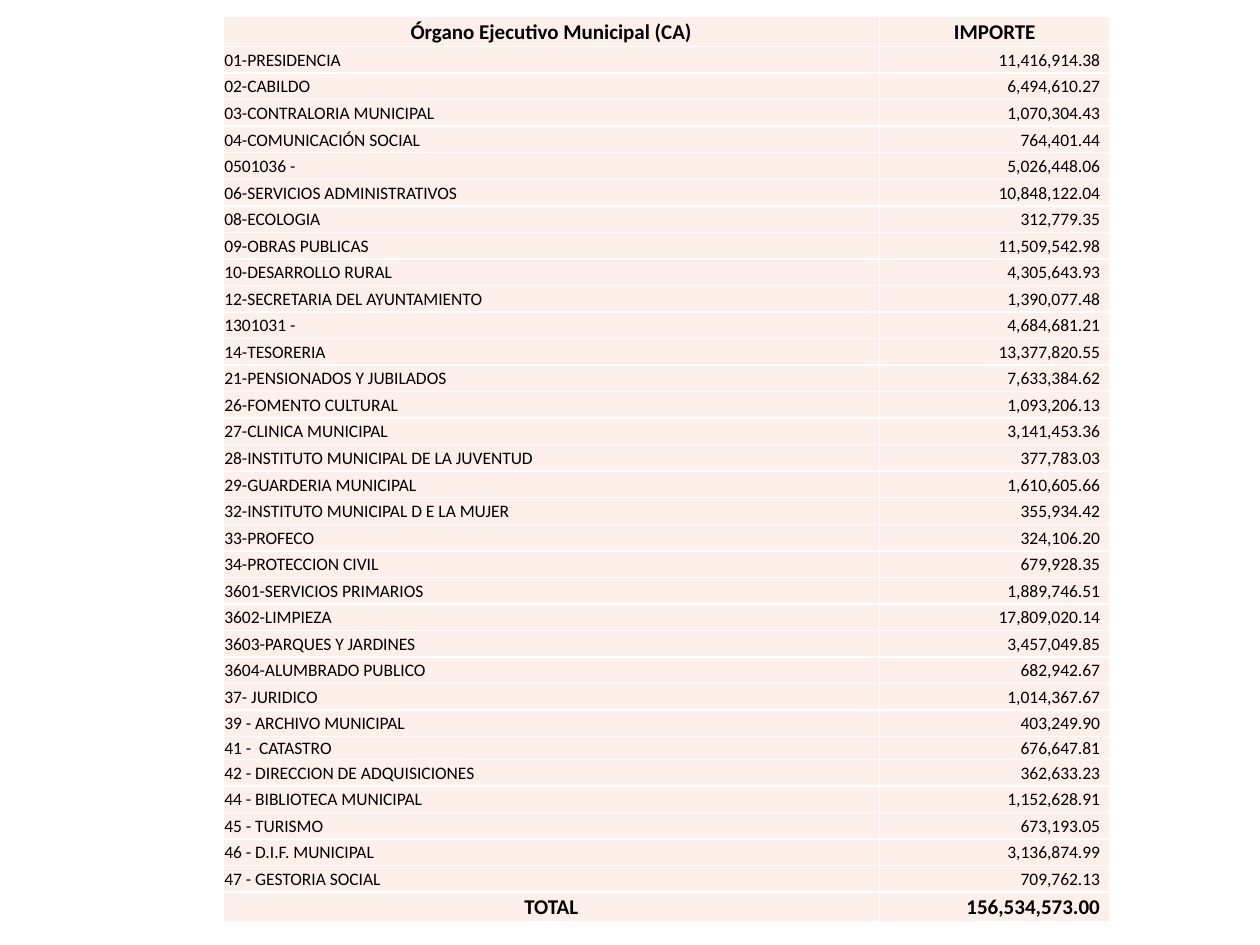
from lxml import etree
from pptx import Presentation
from pptx.dml.color import RGBColor
from pptx.enum.text import MSO_ANCHOR, PP_ALIGN
from pptx.oxml.ns import qn
from pptx.util import Inches, Pt

LEFT, CENTER, RIGHT = PP_ALIGN.LEFT, PP_ALIGN.CENTER, PP_ALIGN.RIGHT
MIDDLE = MSO_ANCHOR.MIDDLE
BLACK = RGBColor(0x00, 0x00, 0x00)
WHITE = RGBColor(0xFF, 0xFF, 0xFF)
BLUSH = RGBColor(0xFD, 0xEF, 0xE9)

HEADER = ("Órgano Ejecutivo Municipal (CA)", "IMPORTE")
TOTAL = ("TOTAL", "156,534,573.00")
DEPARTMENTS = [
    ("01-PRESIDENCIA", "11,416,914.38"),
    ("02-CABILDO", "6,494,610.27"),
    ("03-CONTRALORIA MUNICIPAL", "1,070,304.43"),
    ("04-COMUNICACIÓN SOCIAL", "764,401.44"),
    ("0501036 -", "5,026,448.06"),
    ("06-SERVICIOS ADMINISTRATIVOS", "10,848,122.04"),
    ("08-ECOLOGIA", "312,779.35"),
    ("09-OBRAS PUBLICAS", "11,509,542.98"),
    ("10-DESARROLLO RURAL", "4,305,643.93"),
    ("12-SECRETARIA DEL AYUNTAMIENTO", "1,390,077.48"),
    ("1301031 -", "4,684,681.21"),
    ("14-TESORERIA", "13,377,820.55"),
    ("21-PENSIONADOS Y JUBILADOS", "7,633,384.62"),
    ("26-FOMENTO CULTURAL", "1,093,206.13"),
    ("27-CLINICA MUNICIPAL", "3,141,453.36"),
    ("28-INSTITUTO MUNICIPAL DE LA JUVENTUD", "377,783.03"),
    ("29-GUARDERIA MUNICIPAL", "1,610,605.66"),
    ("32-INSTITUTO MUNICIPAL D E LA MUJER", "355,934.42"),
    ("33-PROFECO", "324,106.20"),
    ("34-PROTECCION CIVIL", "679,928.35"),
    ("3601-SERVICIOS PRIMARIOS", "1,889,746.51"),
    ("3602-LIMPIEZA", "17,809,020.14"),
    ("3603-PARQUES Y JARDINES", "3,457,049.85"),
    ("3604-ALUMBRADO PUBLICO", "682,942.67"),
    ("37- JURIDICO", "1,014,367.67"),
    ("39 - ARCHIVO MUNICIPAL", "403,249.90"),
    ("41 -  CATASTRO", "676,647.81"),
    ("42 - DIRECCION DE ADQUISICIONES", "362,633.23"),
    ("44 - BIBLIOTECA MUNICIPAL", "1,152,628.91"),
    ("45 - TURISMO", "673,193.05"),
    ("46 - D.I.F. MUNICIPAL", "3,136,874.99"),
    ("47 - GESTORIA SOCIAL", "709,762.13"),
]
SHORT_ROW = 27
COLUMN_WIDTHS = (Inches(5.21), Inches(1.83))
TABLE_HEIGHT = Inches(7.2)
HEADING_HEIGHT = Inches(0.24)
SHORT_HEIGHT = Inches(0.18)

BODY_FONT = {"name": "Calibri", "size": Pt(10), "bold": False}
HEADING_FONT = {**BODY_FONT, "size": Pt(12), "bold": True}
CELL_FORMAT = {"vertical_anchor": MIDDLE, "margin_left": Inches(0.01),
               "margin_top": Inches(0.01), "margin_right": Inches(0.01),
               "margin_bottom": 0}
AMOUNT_FORMAT = {**CELL_FORMAT, "margin_right": Inches(0.08)}
TABLE_FLAGS = {"first_row": False, "horz_banding": False}


def apply_format(target, values):
    """Set every attribute named in values on the target."""
    for name, value in values.items():
        setattr(target, name, value)


class BudgetSlide:
    """Hold the table style and the slide that receives it."""

    def __init__(self, slide, fill, border, text_color):
        self.slide = slide
        self.fill = fill
        self.border = border
        self.text_color = text_color

    def add_borders(self, cell):
        """Draw a thin line on all four sides of a cell."""
        properties = cell._tc.get_or_add_tcPr()
        for side in ("a:lnL", "a:lnR", "a:lnT", "a:lnB"):
            line = etree.SubElement(properties, qn(side), w=str(Pt(1)))
            solid = etree.SubElement(line, qn("a:solidFill"))
            etree.SubElement(solid, qn("a:srgbClr"), val=str(self.border))

    def fill_cell(self, cell, text, alignment, font, cell_format):
        """Write and style one cell."""
        self.add_borders(cell)
        cell.fill.solid()
        cell.fill.fore_color.rgb = self.fill
        apply_format(cell, cell_format)
        paragraph = cell.text_frame.paragraphs[0]
        paragraph.alignment = alignment
        run = paragraph.add_run()
        run.text = text
        apply_format(run.font, font)
        run.font.color.rgb = self.text_color

    def add_table(self, left, top, rows, heights):
        """Add the budget table with its heading and total rows."""
        shape = self.slide.shapes.add_table(
            len(rows), len(COLUMN_WIDTHS), left, top, sum(COLUMN_WIDTHS), sum(heights))
        table = shape.table
        apply_format(table, TABLE_FLAGS)
        for column, width in zip(table.columns, COLUMN_WIDTHS):
            column.width = width
        last = len(rows) - 1
        for index, (name, amount) in enumerate(rows):
            table.rows[index].height = heights[index]
            is_header = index == 0
            is_heading = index in (0, last)
            font = HEADING_FONT if is_heading else BODY_FONT
            self.fill_cell(table.cell(index, 0), name,
                           CENTER if is_heading else LEFT, font, CELL_FORMAT)
            self.fill_cell(table.cell(index, 1), amount,
                           CENTER if is_header else RIGHT, font,
                           CELL_FORMAT if is_header else AMOUNT_FORMAT)


def main():
    """Build the municipal budget slide and save it."""
    presentation = Presentation()
    presentation.slide_width = Inches(10)
    presentation.slide_height = Inches(7.5)
    slide = presentation.slides.add_slide(presentation.slide_layouts[6])
    regular_count = len(DEPARTMENTS) - 1
    regular_height = (TABLE_HEIGHT - 2 * HEADING_HEIGHT - SHORT_HEIGHT) // regular_count
    heights = [HEADING_HEIGHT, *[regular_height] * len(DEPARTMENTS), HEADING_HEIGHT]
    heights[SHORT_ROW] = SHORT_HEIGHT
    budget = BudgetSlide(slide, BLUSH, WHITE, BLACK)
    budget.add_table(Inches(1.77), Inches(0.13), [HEADER, *DEPARTMENTS, TOTAL], heights)
    presentation.save("out.pptx")


if __name__ == "__main__":
    main()
